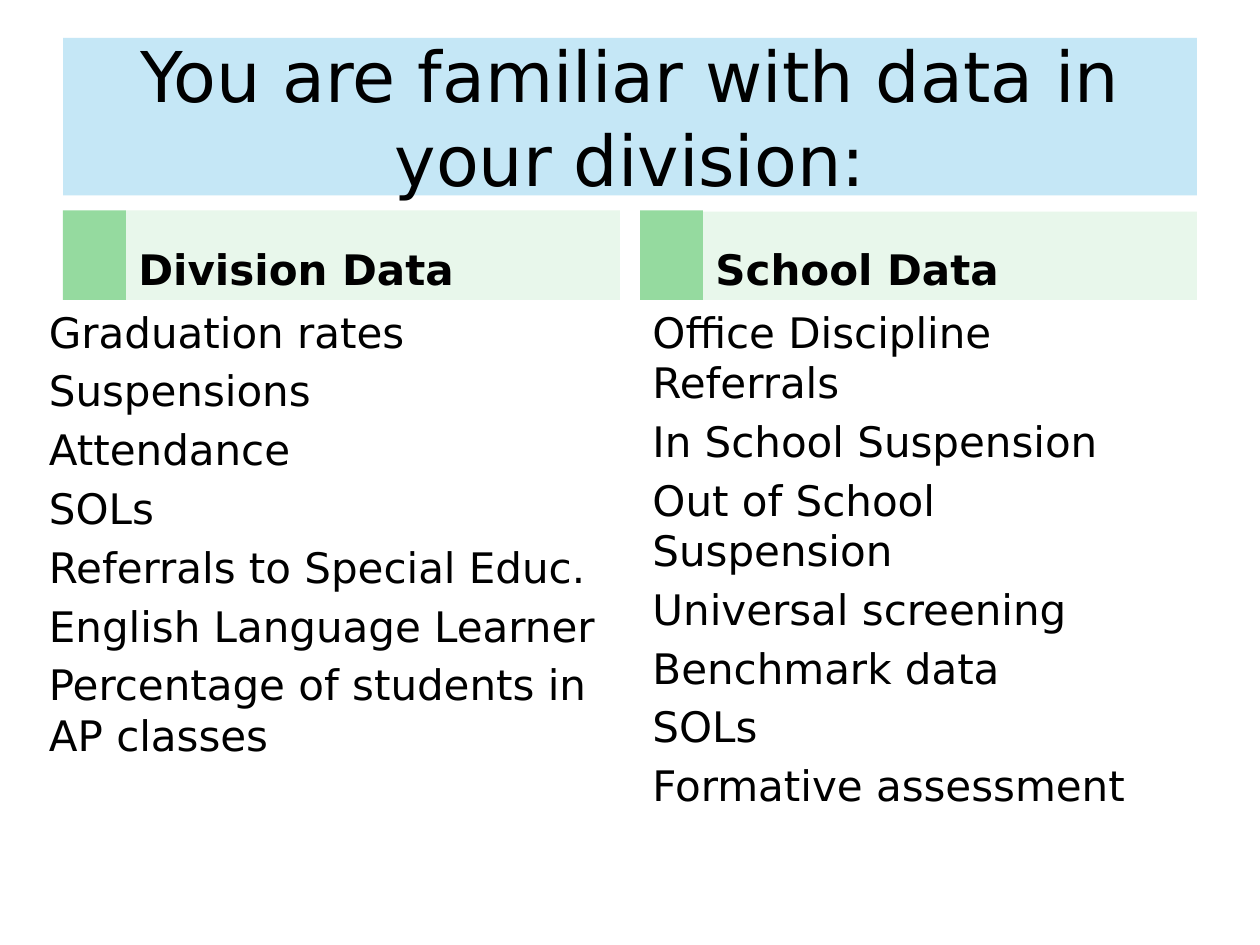
from dataclasses import dataclass

from lxml import etree
from pptx import Presentation
from pptx.dml.color import RGBColor
from pptx.enum.shapes import MSO_SHAPE as Preset
from pptx.enum.text import MSO_ANCHOR as Anchor, MSO_AUTO_SIZE as AutoSize, PP_ALIGN as Align
from pptx.oxml.ns import qn
from pptx.util import Inches, Pt


@dataclass(frozen=True)
class Theme:
    font: str = "DejaVu Sans"
    text: str = "000000"
    title_fill: str = "A9DCF2"
    title_opacity: int = 67
    accent: str = "95DA9F"
    heading_fill: str = "E8F7EB"
    title_size: int = 40
    body_size: int = 24
    heading_space: float = 4.2
    body_space: float = 4.8


class SlideBuilder:
    def __init__(self, slide, theme):
        self.slide = slide
        self.theme = theme

    def fill(self, shape, color):
        shape.fill.solid()
        shape.fill.fore_color.rgb = RGBColor.from_string(color)

    def add_lines(self, shape, lines, size, anchor, align=Align.LEFT, bold=False, space=0):
        frame = shape.text_frame
        frame.word_wrap = True
        frame.auto_size = AutoSize.NONE
        frame.vertical_anchor = anchor
        for index, line in enumerate(lines):
            paragraph = frame.add_paragraph() if index else frame.paragraphs[0]
            paragraph.alignment = align
            paragraph.space_before = Pt(space)
            run = paragraph.add_run()
            run.text = line
            run.font.name = self.theme.font
            run.font.size = Pt(size)
            run.font.bold = bold
            run.font.color.rgb = RGBColor.from_string(self.theme.text)

    def title(self, text, left, top, width, height):
        title = self.slide.shapes.title
        title.left, title.top = Inches(left), Inches(top)
        title.width, title.height = Inches(width), Inches(height)
        self.fill(title, self.theme.title_fill)
        # Translucent title band
        color = title.element.spPr.find(qn("a:solidFill"))[0]
        etree.SubElement(color, qn("a:alpha"), val=str(self.theme.title_opacity * 1000))
        self.add_lines(title, [text], self.theme.title_size, Anchor.MIDDLE, Align.CENTER)

    def block(self, color, left, top, width, height):
        shape = self.slide.shapes.add_shape(
            Preset.RECTANGLE, Inches(left), Inches(top), Inches(width), Inches(height))
        shape.shadow.inherit = False
        shape.line.fill.background()
        self.fill(shape, color)
        return shape

    def heading(self, text, left, top, width, height):
        shape = self.block(self.theme.heading_fill, left, top, width, height)
        self.add_lines(shape, [text], self.theme.body_size, Anchor.BOTTOM,
                       bold=True, space=self.theme.heading_space)

    def text_list(self, lines, left, top, width, height):
        box = self.slide.shapes.add_textbox(
            Inches(left), Inches(top), Inches(width), Inches(height))
        self.add_lines(box, lines, self.theme.body_size, Anchor.TOP,
                       space=self.theme.body_space)


# Column geometry
ACCENT_TOP, ACCENT_WIDTH, HEADING_WIDTH = 1.67, 0.5, 3.92
LIST_TOP, LIST_HEIGHT = 2.38, 4.32

# Heading, column left, heading top, list left, items
COLUMNS = [
    ("Division Data", 0.5, 1.67, 0.29, [
        "Graduation rates",
        "Suspensions",
        "Attendance",
        "SOLs",
        "Referrals to Special Educ.",
        "English Language Learner",
        "Percentage of students in AP classes",
    ]),
    ("School Data", 5.08, 1.68, 5.08, [
        "Office Discipline Referrals",
        "In School Suspension",
        "Out of School Suspension",
        "Universal screening",
        "Benchmark data",
        "SOLs",
        "Formative assessment",
    ]),
]


def main():
    presentation = Presentation()
    presentation.slide_width, presentation.slide_height = Inches(10), Inches(7.5)
    title_only = presentation.slide_layouts[5]
    theme = Theme()
    builder = SlideBuilder(presentation.slides.add_slide(title_only), theme)

    builder.title("You are familiar with data in your division:", 0.5, 0.3, 9, 1.25)

    # Each column: accent block, heading band and list
    for heading, left, heading_top, list_left, items in COLUMNS:
        heading_left = left + ACCENT_WIDTH
        right = heading_left + HEADING_WIDTH
        builder.block(theme.accent, left, ACCENT_TOP, ACCENT_WIDTH, LIST_TOP - ACCENT_TOP)
        builder.heading(heading, heading_left, heading_top, HEADING_WIDTH,
                        LIST_TOP - heading_top)
        builder.text_list(items, list_left, LIST_TOP, right - list_left, LIST_HEIGHT)

    presentation.save("out.pptx")


if __name__ == "__main__":
    main()
